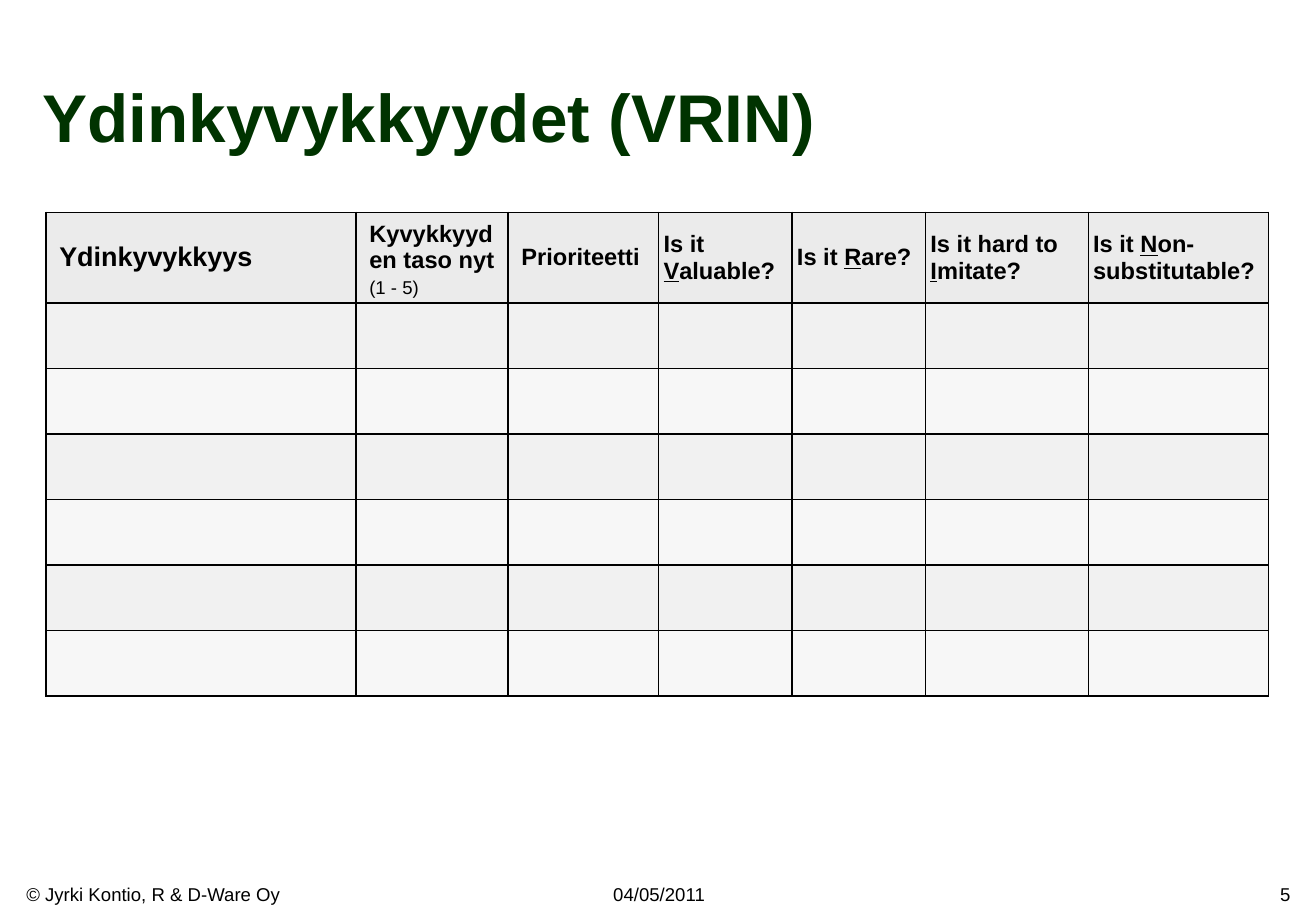
from lxml.etree import SubElement
from pptx import Presentation
from pptx.dml.color import RGBColor
from pptx.enum.text import MSO_ANCHOR, MSO_AUTO_SIZE, PP_ALIGN
from pptx.oxml.ns import qn
from pptx.util import Cm, Pt

BLACK = RGBColor(0x00, 0x00, 0x00)
GREEN = RGBColor(0x00, 0x33, 0x00)
HEADER = RGBColor(0xEB, 0xEB, 0xEB)
BANDS = [RGBColor(0xF1, 0xF1, 0xF1), RGBColor(0xF7, 0xF7, 0xF7)]

COLUMN_WIDTHS = [6.48, 3.18, 3.15, 2.79, 2.79, 3.4, 3.77]
HEADER_HEIGHT, ROW_HEIGHT, BODY_ROWS = 1.88, 1.37, 6
WIDE, NARROW = (0.28, 0.18, 0.28, 0.18), (0.1, 0.1, 0.1, 0.1)
BOLD = dict(size=Pt(14), bold=True)
LETTER = dict(BOLD, underline=True)

# Each heading: cell margins, then paragraphs of (text, format) runs
HEADINGS = [
    (WIDE, [[("Ydinkyvykkyys", dict(size=Pt(16), bold=True))]]),
    ((0.28, 0.18, 0.28, 0.1), [[("Kyvykkyyden taso nyt", BOLD)],
                               [("(1 - 5)", dict(size=Pt(11), bold=False))]]),
    (WIDE, [[("Prioriteetti", BOLD)]]),
] + [
    (NARROW, [[(start, BOLD), (letter, LETTER), (end, BOLD)]])
    for start, letter, end in [
        ("Is it ", "V", "aluable?"),
        ("Is it ", "R", "are?"),
        ("Is it hard to ", "I", "mitate?"),
        ("Is it ", "N", "on-substitutable?"),
    ]
]


def add_run(p, text, color=BLACK, **formats):
    r = p.add_run()
    r.text = text
    r.font.color.rgb = color
    for name, value in dict(name="Arial", **formats).items():
        setattr(r.font, name, value)


def set_margins(target, margins):
    for side, value in zip(("left", "top", "right", "bottom"), margins):
        setattr(target, f"margin_{side}", Cm(value))


def add_title(slide, left, top, width, height):
    sp = slide.shapes.title
    sp.left, sp.top, sp.width, sp.height = map(Cm, (left, top, width, height))
    tf = sp.text_frame
    tf.vertical_anchor = MSO_ANCHOR.BOTTOM
    tf.auto_size = MSO_AUTO_SIZE.NONE
    p = tf.paragraphs[0]
    p.alignment = PP_ALIGN.LEFT
    add_run(p, "Ydinkyvykkyydet (VRIN)", GREEN, size=Pt(40), bold=True)


def style_cell(cell, color):
    tcPr = cell._tc.get_or_add_tcPr()
    for edge in ("lnL", "lnR", "lnT", "lnB"):
        ln = SubElement(tcPr, qn(f"a:{edge}"), w=str(Pt(1)))
        fill = SubElement(ln, qn("a:solidFill"))
        SubElement(fill, qn("a:srgbClr"), val=str(BLACK))
    cell.fill.solid()
    cell.fill.fore_color.rgb = color
    cell.vertical_anchor = MSO_ANCHOR.MIDDLE


def add_vrin_table(slide, left, top):
    height = HEADER_HEIGHT + BODY_ROWS * ROW_HEIGHT
    table = slide.shapes.add_table(
        BODY_ROWS + 1, len(COLUMN_WIDTHS), Cm(left), Cm(top),
        Cm(sum(COLUMN_WIDTHS)), Cm(height)).table
    for column, width in zip(table.columns, COLUMN_WIDTHS):
        column.width = Cm(width)
    for i, row in enumerate(table.rows):
        row.height = Cm(ROW_HEIGHT if i else HEADER_HEIGHT)
        for cell in row.cells:
            style_cell(cell, BANDS[(i - 1) % 2] if i else HEADER)

    # Header texts
    for cell, (margins, paragraphs) in zip(table.rows[0].cells, HEADINGS):
        set_margins(cell, margins)
        tf = cell.text_frame
        for i, runs in enumerate(paragraphs):
            p = tf.add_paragraph() if i else tf.paragraphs[0]
            p.space_before = Pt(2 if i else 0)
            for text, formats in runs:
                add_run(p, text, **formats)


def add_footer(slide, top, height):
    for text, left, width, align in [
        ("© Jyrki Kontio, R & D-Ware Oy", 0.3, 5.87, PP_ALIGN.LEFT),
        ("04/05/2011", 12.55, 2.46, PP_ALIGN.CENTER),
        ("5", 26.24, 0.99, PP_ALIGN.RIGHT),
    ]:
        sp = slide.shapes.add_textbox(Cm(left), Cm(top), Cm(width), Cm(height))
        tf = sp.text_frame
        tf.word_wrap = False
        tf.vertical_anchor = MSO_ANCHOR.MIDDLE
        p = tf.paragraphs[0]
        p.alignment = align
        add_run(p, text, size=Pt(11))


def main():
    prs = Presentation()
    prs.slide_width, prs.slide_height = Cm(27.51), Cm(19.05)
    slide = prs.slides.add_slide(prs.slide_layouts[5])
    add_title(slide, 0.64, 0.2, 21.59, 3.2)
    add_vrin_table(slide, 0.96, 4.44)
    add_footer(slide, 18.34, 0.71)
    prs.save("out.pptx")


if __name__ == "__main__":
    main()
